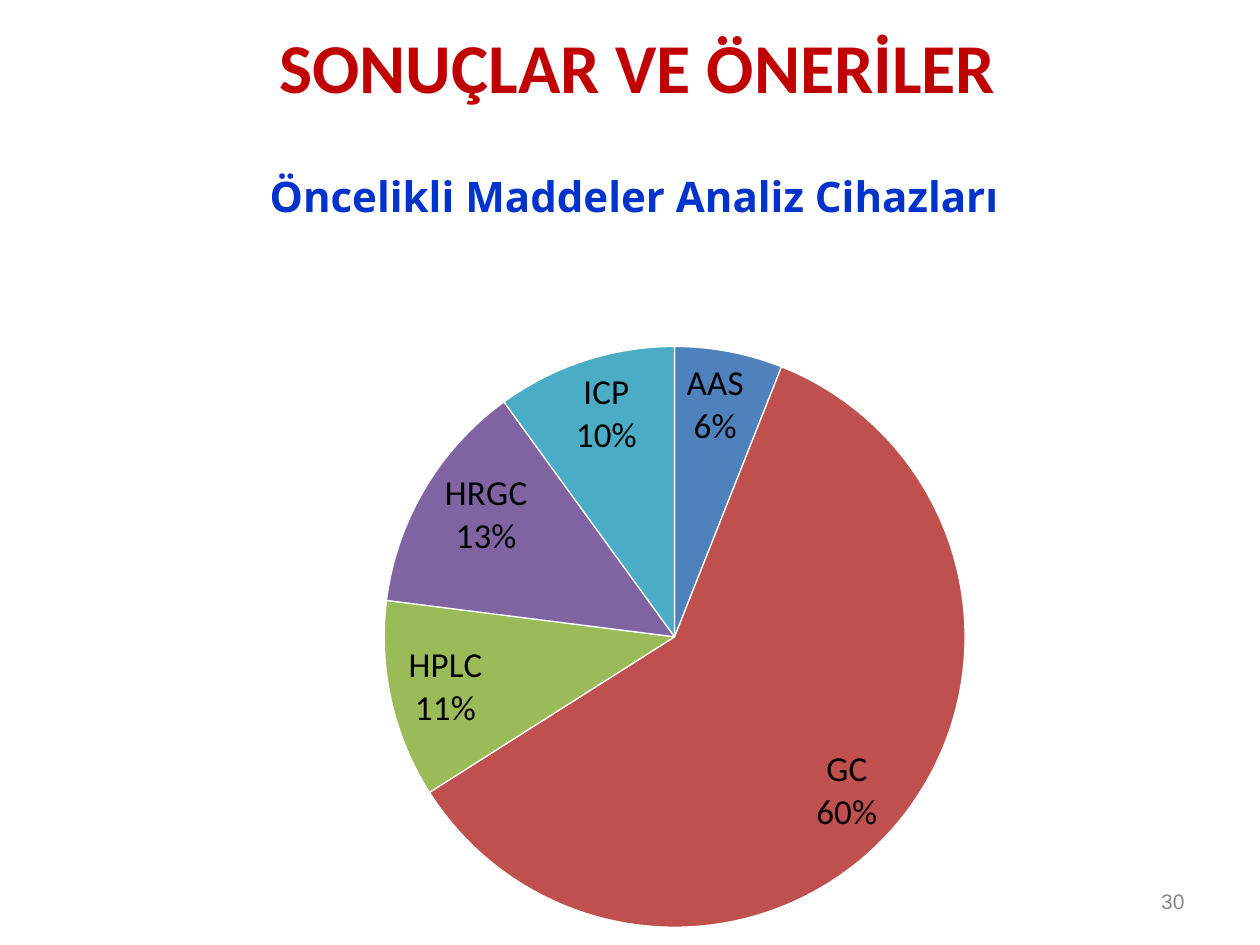
import dataclasses

import pptx
import pptx.chart.data
import pptx.dml.color
import pptx.enum.chart
import pptx.enum.text
import pptx.oxml
import pptx.oxml.ns
import pptx.util

WIDTH, HEIGHT = 10, 7.5
ALIGN = pptx.enum.text.PP_ALIGN
NS = pptx.oxml.ns.nsdecls("c")


@dataclasses.dataclass(frozen=True)
class Box:
    """Left, top, width and height as shares of the slide."""
    x: float
    y: float
    w: float
    h: float

    def lengths(self) -> tuple:
        """Return the box in slide units."""
        return tuple(pptx.util.Inches(share * side) for share, side in
                     zip((self.x, self.y, self.w, self.h), (WIDTH, HEIGHT) * 2))


@dataclasses.dataclass(frozen=True)
class Slice:
    """One analysis device with its share, colour and label shift in inches."""
    device: str
    percent: int
    color: str
    dx: float
    dy: float


CHART = Box(0.028, 0.14, 0.953, 0.86)
SLICES = [
    Slice("AAS", 6, "4F81BD", 0.13, 0.02),
    Slice("GC", 60, "C0504D", -0.12, 0.13),
    Slice("HPLC", 11, "9BBB59", 0.08, 0.25),
    Slice("HRGC", 13, "8064A2", 0.11, -0.17),
    Slice("ICP", 10, "4BACC6", -0.09, 0.02),
]


def rgb(color: str) -> pptx.dml.color.RGBColor:
    """Turn a hex string into a colour."""
    return pptx.dml.color.RGBColor.from_string(color)


def set_font(font, name: str, size: float, color: str, bold: bool = False) -> None:
    """Format a font."""
    font.name, font.size, font.bold = name, pptx.util.Pt(size), bold
    font.color.rgb = rgb(color)


def write(tf, text: str, *, align=ALIGN.CENTER, **font) -> None:
    """Write one formatted paragraph into a text frame."""
    p = tf.paragraphs[0]
    p.alignment = align
    r = p.add_run()
    r.text = text
    set_font(r.font, **font)


def add_text(s, box: Box, text: str, **style) -> None:
    """Add a vertically centred text box."""
    tf = s.shapes.add_textbox(*box.lengths()).text_frame
    tf.word_wrap = True
    tf.vertical_anchor = pptx.enum.text.MSO_ANCHOR.MIDDLE
    write(tf, text, **style)


def place(parent, index: int, target: str = "", edge: bool = True, **inches: float) -> None:
    """Lay out a chart part, from the chart's edge or from its usual place."""
    for old in parent.findall(pptx.oxml.ns.qn("c:layout")):
        parent.remove(old)
    sides = {"x": CHART.w * WIDTH, "y": CHART.h * HEIGHT}
    sides.update(w=sides["x"], h=sides["y"])
    inner = f'<c:layoutTarget val="{target}"/>' if target else ""
    if edge:
        inner += "".join(f'<c:{key}Mode val="edge"/>' for key in "xy")
    inner += "".join(f'<c:{key} val="{value / sides[key]}"/>'
                     for key, value in inches.items())
    parent.insert(index, pptx.oxml.parse_xml(
        f'<c:layout {NS}><c:manualLayout>{inner}</c:manualLayout></c:layout>'))


def add_label(point, part: Slice) -> None:
    """Label a slice with its device and percentage."""
    label = point.data_label
    set_font(label.font, "Calibri", 20, "000000")
    label.position = pptx.enum.chart.XL_LABEL_POSITION.INSIDE_END
    element = label._get_or_add_dLbl()
    for tag, shown in (("showVal", 0), ("showCatName", 1), ("showPercent", 1)):
        element.find(pptx.oxml.ns.qn(f"c:{tag}")).set("val", str(shown))
    place(element, 1, edge=False, x=part.dx, y=part.dy)
    element.insert(2, pptx.oxml.parse_xml(
        f'<c:numFmt {NS} formatCode="0%" sourceLinked="0"/>'))
    element.append(pptx.oxml.parse_xml(f'<c:separator {NS}>\n</c:separator>'))


def add_pie(s, title: str, slices: list[Slice]) -> None:
    """Add the pie of analysis devices."""
    data = pptx.chart.data.CategoryChartData()
    data.categories = [part.device for part in slices]
    data.add_series("Series 1", [part.percent for part in slices])
    chart = s.shapes.add_chart(
        pptx.enum.chart.XL_CHART_TYPE.PIE, *CHART.lengths(), data).chart
    set_font(chart.font, "Calibri", 18, "000000")
    chart.has_legend = False
    chart.has_title = True
    write(chart.chart_title.text_frame, title,
          name="Noto Sans", size=24, color="0033CC", bold=True)
    place(chart.chart_title._element, 1, x=1.8, y=0.18)
    place(chart._chartSpace.chart.plotArea, 0, "inner", x=2.77, y=1.7, w=4.61, h=4.61)

    plot = chart.plots[0]
    plot.vary_by_categories = True
    for index, part in enumerate(slices):
        point = plot.series[0].points[index]
        point.format.fill.solid()
        point.format.fill.fore_color.rgb = rgb(part.color)
        point.format.line.color.rgb = rgb("FFFFFF")
        point.format.line.width = pptx.util.Pt(0.75)
        add_label(point, part)
    labels = plot.series[0].data_labels
    labels.show_category_name = labels.show_percentage = True
    labels.show_value = False
    set_font(labels.font, "Calibri", 20, "000000")


def main() -> None:
    """Build and save the slide."""
    prs = pptx.Presentation()
    prs.slide_width, prs.slide_height = map(pptx.util.Inches, (WIDTH, HEIGHT))
    s = prs.slides.add_slide(prs.slide_layouts[6])
    add_text(s, Box(0.012, -0.004, 0.988, 0.147), "SONUÇLAR VE ÖNERİLER",
             name="Calibri", size=40, color="C00000", bold=True)
    add_text(s, Box(0.717, 0.927, 0.233, 0.053), "30", align=ALIGN.RIGHT,
             name="Arial", size=12, color="898989")
    add_pie(s, "Öncelikli Maddeler Analiz Cihazları", SLICES)
    prs.save("out.pptx")


if __name__ == "__main__":
    main()
